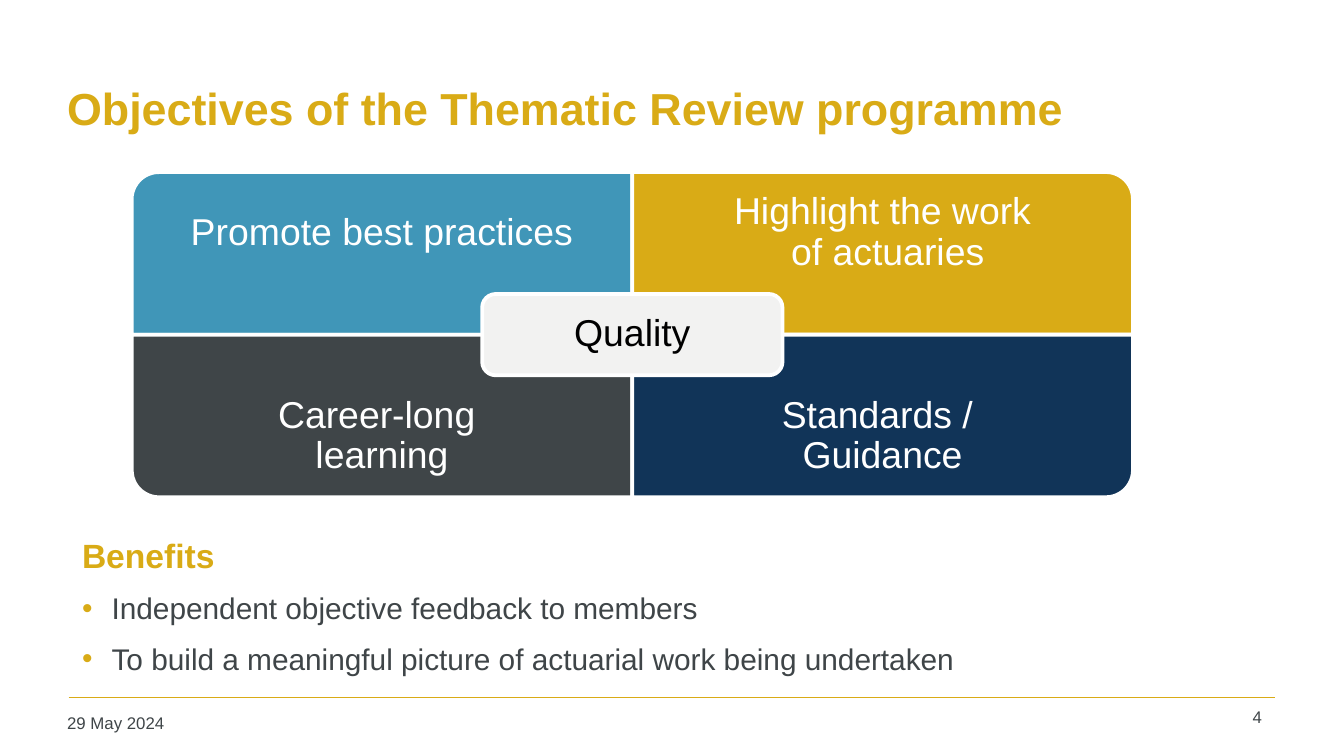
from lxml.etree import SubElement
from pptx import Presentation
from pptx.dml.color import RGBColor
from pptx.enum.shapes import MSO_CONNECTOR, MSO_SHAPE
from pptx.enum.text import MSO_ANCHOR, PP_ALIGN
from pptx.oxml.ns import qn
from pptx.util import Inches, Pt

COLORS = {
    "gold": "D9AB16",
    "blue": "4096B8",
    "slate": "3F4548",
    "navy": "113458",
    "pale": "F2F2F1",
    "white": "FFFFFF",
    "black": "000000",
}


def color(name):
    return RGBColor.from_string(COLORS[name])


def add_bullet(para):
    properties = para._p.get_or_add_pPr()
    properties.set("marL", str(Inches(0.22)))
    properties.set("indent", str(-Inches(0.22)))
    bullet_color = SubElement(properties, qn("a:buClr"))
    SubElement(bullet_color, qn("a:srgbClr")).set("val", COLORS["gold"])
    SubElement(properties, qn("a:buFont")).set("typeface", "Arial")
    SubElement(properties, qn("a:buChar")).set("char", "•")


def write(para, text, size=20, ink="white", bold=False, align=PP_ALIGN.LEFT,
          spacing=None, before=None, bullet=False):
    para.text = text
    para.alignment = align
    if spacing:
        para.line_spacing = spacing
    if before:
        para.space_before = Pt(before)
    if bullet:
        add_bullet(para)
    for span in para.runs:
        span.font.name = "Arial"
        span.font.size = Pt(size)
        span.font.bold = bold
        span.font.color.rgb = color(ink)


def add_frame(page, left, top, width, height, anchor=MSO_ANCHOR.TOP, inset=None):
    box = page.shapes.add_textbox(Inches(left), Inches(top), Inches(width), Inches(height))
    frame = box.text_frame
    frame.word_wrap = True
    frame.vertical_anchor = anchor
    frame.margin_left = frame.margin_right = Inches(inset or 0.07)
    frame.margin_top = frame.margin_bottom = Inches(inset or 0.04)
    return frame


def add_panel(page, kind, left, top, width, height, fill, rotation=0):
    if rotation % 180:
        left, top = left + (width - height) / 2, top + (height - width) / 2
        width, height = height, width
    panel = page.shapes.add_shape(kind, Inches(left), Inches(top), Inches(width), Inches(height))
    panel.rotation = rotation
    panel.shadow.inherit = False
    panel.fill.solid()
    panel.fill.fore_color.rgb = color(fill)
    panel.line.color.rgb = color("white")
    panel.line.width = Pt(2)


def add_title(page, left, top, width, height):
    frame = add_frame(page, left, top, width, height, MSO_ANCHOR.MIDDLE)
    write(frame.paragraphs[0], "Objectives of the Thematic Review programme",
          size=24, ink="gold", bold=True)


def add_matrix(page, left, top, width, height):
    quadrants = [
        ("Promote best practices", "blue", 270),
        ("Highlight the work\n of actuaries", "gold", 0),
        ("Career-long \nlearning", "slate", 180),
        ("Standards / \nGuidance", "navy", 90),
    ]
    cell_width, cell_height = width / 2, height / 2
    label_height = cell_height * 0.75
    for index, (text, fill, rotation) in enumerate(quadrants):
        row, column = divmod(index, 2)
        x, y = left + column * cell_width, top + row * cell_height
        add_panel(page, MSO_SHAPE.ROUND_1_RECTANGLE, x, y, cell_width, cell_height,
                  fill, rotation)
        label_top = y + row * (cell_height - label_height)
        frame = add_frame(page, x, label_top, cell_width, label_height,
                          MSO_ANCHOR.MIDDLE, 0.16)
        write(frame.paragraphs[0], text, align=PP_ALIGN.CENTER, spacing=0.9)

    hub_width, hub_height = cell_width * 0.6, cell_height / 2
    hub = (left + (width - hub_width) / 2, top + (height - hub_height) / 2,
           hub_width, hub_height)
    add_panel(page, MSO_SHAPE.ROUNDED_RECTANGLE, *hub, "pale")
    frame = add_frame(page, *hub, MSO_ANCHOR.MIDDLE, 0.08)
    write(frame.paragraphs[0], "Quality", ink="black", align=PP_ALIGN.CENTER, spacing=0.9)


def add_benefits(page, left, top, width, height):
    frame = add_frame(page, left, top, width, height)
    write(frame.paragraphs[0], "Benefits", size=18, ink="gold", bold=True)
    for text in (
        "Independent objective feedback to members",
        "To build a meaningful picture of actuarial work being undertaken",
    ):
        write(frame.add_paragraph(), text, size=16, ink="slate", before=8, bullet=True)


def add_footer(page, left, top, width):
    rule = page.shapes.add_connector(MSO_CONNECTOR.STRAIGHT, Inches(left), Inches(top),
                                     Inches(left + width), Inches(top))
    rule.line.color.rgb = color("gold")
    rule.line.width = Pt(1)
    SubElement(rule._element.spPr, qn("a:effectLst"))
    date = add_frame(page, left - 0.08, top + 0.07, 2.2, 0.27)
    write(date.paragraphs[0], "29 May 2024", size=9, ink="slate")
    number = add_frame(page, left + width - 0.74, top + 0.03, 0.71, 0.28)
    write(number.paragraphs[0], "4", size=9, ink="slate", align=PP_ALIGN.RIGHT)


def main():
    deck = Presentation()
    deck.slide_width = Inches(10)
    deck.slide_height = deck.slide_width * 9 // 16
    page = deck.slides.add_slide(deck.slide_layouts[6])
    add_footer(page, 0.51, 5.19, 8.98)
    add_title(page, 0.43, 0.33, 9.07, 0.94)
    add_matrix(page, 0.98, 1.28, 7.45, 2.42)
    add_benefits(page, 0.54, 3.94, 7.45, 1.3)
    deck.save("out.pptx")


if __name__ == "__main__":
    main()
